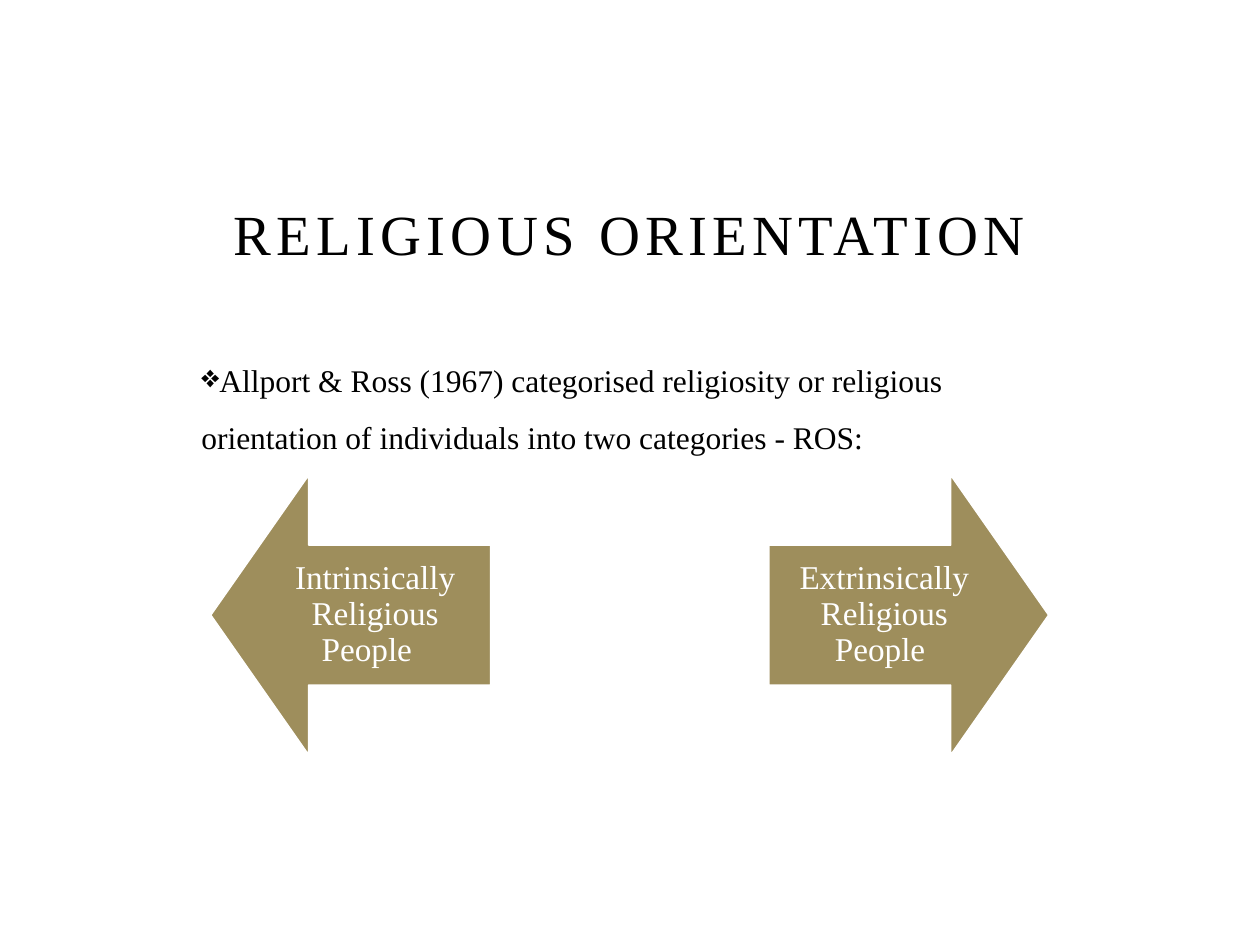
"""Build the slide on the two kinds of religious orientation."""
from dataclasses import dataclass

from lxml import etree
from pptx import Presentation
from pptx import util as u
from pptx.dml.color import RGBColor
from pptx.enum import shapes, text
from pptx.oxml.ns import qn

COLOURS = {"ink": "000000", "sand": "9E8E5C", "paper": "FFFFFF"}
FONT = "Times New Roman"
LEFT, WIDTH = u.Cm(3.81), u.Cm(17.78)
ARROW_TOP, ARROW_SIZE = u.Cm(9.58), u.Cm(5.64)


@dataclass
class Orientation:
    label: str
    arrow: shapes.MSO_SHAPE
    left: float


ORIENTATIONS = [
    Orientation("Intrinsically Religious People  ", shapes.MSO_SHAPE.LEFT_ARROW, 4.25),
    Orientation("Extrinsically Religious People ", shapes.MSO_SHAPE.RIGHT_ARROW, 15.5),
]


def colour(name: str) -> RGBColor:
    return RGBColor.from_string(COLOURS[name])


def apply(target, formats: dict) -> None:
    for attribute, value in formats.items():
        setattr(target, attribute, value)


def write(frame, words: str, size: float, ink: str, frame_format: dict, paragraph_format: dict):
    apply(frame, {"word_wrap": True, "auto_size": text.MSO_AUTO_SIZE.NONE, **frame_format})
    paragraph = frame.paragraphs[0]
    apply(paragraph, paragraph_format)
    run = paragraph.add_run()
    run.text = words
    apply(run.font, {"name": FONT, "size": u.Pt(size), "bold": False})
    run.font.color.rgb = colour(ink)
    return paragraph


def add_heading(slide) -> None:
    title = slide.shapes.title
    apply(title, {"left": LEFT, "top": u.Cm(3.61), "width": WIDTH, "height": u.Cm(1.9)})
    heading = write(title.text_frame, "RELIGIOUS ORIENTATION", 32.4, "ink",
                    {"vertical_anchor": text.MSO_ANCHOR.BOTTOM},
                    {"alignment": text.PP_ALIGN.CENTER})
    heading.runs[0]._r.get_or_add_rPr().set("spc", "300")


def add_statement(slide) -> None:
    box = slide.shapes.add_textbox(LEFT, u.Cm(6.78), WIDTH, u.Cm(8.46))
    statement = write(
        box.text_frame,
        "Allport & Ross (1967) categorised religiosity or religious orientation "
        "of individuals into two categories - ROS:",
        18, "ink", {}, {"line_spacing": 1.5})
    properties = statement._p.get_or_add_pPr()
    apply_indent = {"marL": "0", "indent": "0"}
    for key, value in apply_indent.items():
        properties.set(key, value)
    etree.SubElement(properties, qn("a:buChar")).set("char", "❖")


def add_orientation(slide, orientation: Orientation) -> None:
    arrow = slide.shapes.add_shape(orientation.arrow, u.Cm(orientation.left), ARROW_TOP,
                                   ARROW_SIZE, ARROW_SIZE)
    arrow.adjustments[0], arrow.adjustments[1] = 0.5, 0.35
    arrow.shadow.inherit = False
    arrow.fill.solid()
    arrow.fill.fore_color.rgb = colour("sand")
    arrow.line.color.rgb = colour("paper")
    arrow.line.width = u.Pt(0.85)
    sides = ("left", "top", "right", "bottom")
    write(arrow.text_frame, orientation.label, 19, "paper",
          {"vertical_anchor": text.MSO_ANCHOR.MIDDLE,
           **{f"margin_{side}": u.Cm(0.38) for side in sides}},
          {"alignment": text.PP_ALIGN.CENTER, "line_spacing": 0.9})


def main() -> None:
    deck = Presentation()
    apply(deck, {"slide_width": u.Cm(25.4), "slide_height": u.Cm(19.05)})
    slide = deck.slides.add_slide(deck.slide_layouts[5])
    add_heading(slide)
    add_statement(slide)
    for orientation in ORIENTATIONS:
        add_orientation(slide, orientation)
    deck.save("out.pptx")


if __name__ == "__main__":
    main()
